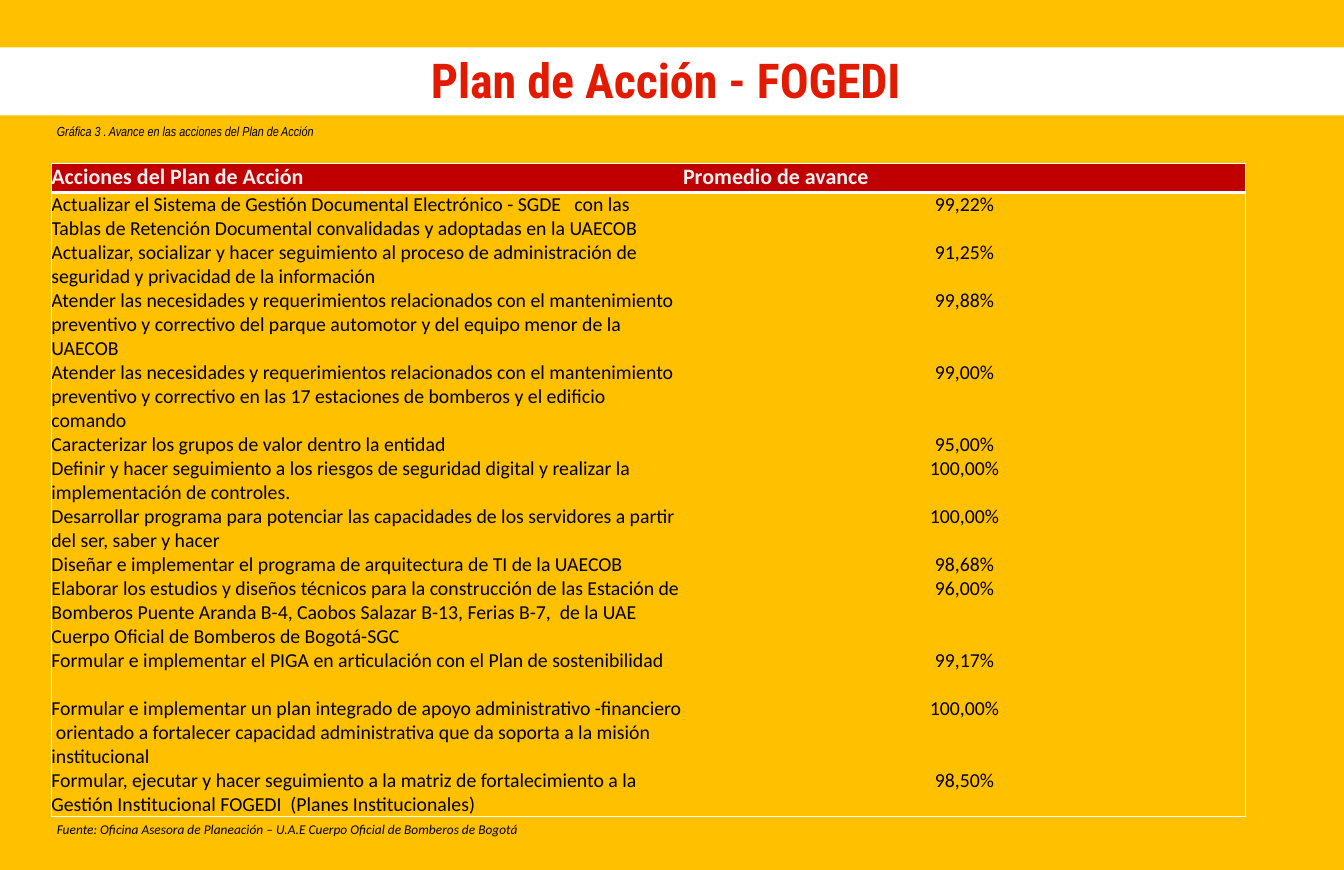
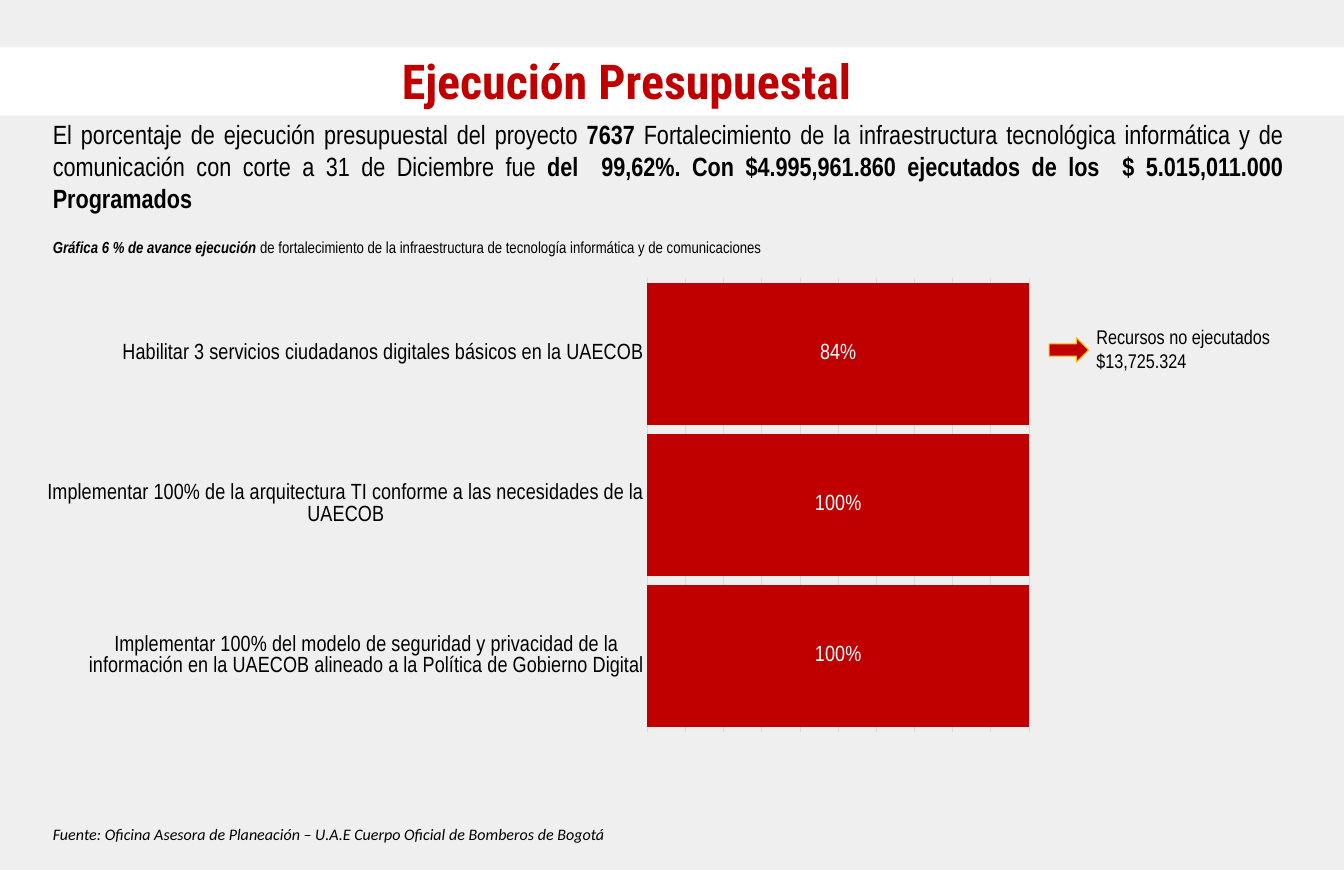
from dataclasses import dataclass

from lxml import etree
from pptx import Presentation
from pptx.chart.data import CategoryChartData
from pptx.dml.color import RGBColor
from pptx.enum.chart import XL_CHART_TYPE, XL_LABEL_POSITION, XL_TICK_MARK
from pptx.enum.shapes import MSO_SHAPE
from pptx.enum.text import MSO_ANCHOR, MSO_AUTO_SIZE, PP_ALIGN
from pptx.oxml.ns import qn
from pptx.util import Inches, Pt

LEFT, CENTER, JUSTIFY = PP_ALIGN.LEFT, PP_ALIGN.CENTER, PP_ALIGN.JUSTIFY
MIDDLE = MSO_ANCHOR.MIDDLE
NO_AUTOFIT = MSO_AUTO_SIZE.NONE
RECTANGLE, RIGHT_ARROW = MSO_SHAPE.RECTANGLE, MSO_SHAPE.RIGHT_ARROW
BAR_STACKED_100 = XL_CHART_TYPE.BAR_STACKED_100
LABEL_CENTER = XL_LABEL_POSITION.CENTER
NO_TICKS = XL_TICK_MARK.NONE

GRID_COLUMNS, GRID_ROWS = 17, 11
SLIDE_WIDTH, SLIDE_HEIGHT = Inches(17), Inches(11)
TITLE_ONLY_LAYOUT = 5


@dataclass(frozen=True)
class Theme:
    yellow: str = "FFC000"
    gray: str = "EFEFEF"
    white: str = "FFFFFF"
    black: str = "000000"
    red: str = "C00000"
    bright_red: str = "E21A00"
    rule: str = "D9D9D9"
    title_font: str = "Roboto Condensed"
    narrow_font: str = "Arial Narrow"
    body_font: str = "Calibri"
    title_size: float = 43.7
    lead_size: float = 24
    header_size: float = 20
    chart_size: float = 20
    body_size: float = 18
    caption_size: float = 14.6
    source_size: float = 12.2
    small_size: float = 12
    hairline: float = 0.75
    border: float = 1
    header_border: float = 3


THEME = Theme()


@dataclass(frozen=True)
class Box:
    column: float
    row: float
    columns: float
    rows: float

    def emu(self) -> tuple[int, int, int, int]:
        return across(self.column), down(self.row), across(self.columns), down(self.rows)


@dataclass(frozen=True)
class Style:
    size: float
    font: str = THEME.narrow_font
    color: str = THEME.black
    bold: bool = False
    italic: bool = False


@dataclass(frozen=True)
class Span:
    text: str
    style: Style


@dataclass(frozen=True)
class Action:
    name: str
    progress: str
    lines: int


@dataclass(frozen=True)
class Goal:
    name: str
    share: float


BAND = Box(0, 0.6, GRID_COLUMNS, 0.86)
SOURCE = "Fuente: Oficina Asesora de Planeación – U.A.E Cuerpo Oficial de Bomberos de Bogotá"
ACTIONS = [
    Action("Actualizar el Sistema de Gestión Documental Electrónico - SGDE   con las Tablas de Retención Documental convalidadas y adoptadas en la UAECOB", "99,22%", 2),
    Action("Actualizar, socializar y hacer seguimiento al proceso de administración de seguridad y privacidad de la información", "91,25%", 2),
    Action("Atender las necesidades y requerimientos relacionados con el mantenimiento preventivo y correctivo del parque automotor y del equipo menor de la UAECOB", "99,88%", 3),
    Action("Atender las necesidades y requerimientos relacionados con el mantenimiento preventivo y correctivo en las 17 estaciones de bomberos y el edificio comando", "99,00%", 3),
    Action("Caracterizar los grupos de valor dentro la entidad", "95,00%", 1),
    Action("Definir y hacer seguimiento a los riesgos de seguridad digital y realizar la implementación de controles.", "100,00%", 2),
    Action("Desarrollar programa para potenciar las capacidades de los servidores a partir del ser, saber y hacer", "100,00%", 2),
    Action("Diseñar e implementar el programa de arquitectura de TI de la UAECOB", "98,68%", 1),
    Action("Elaborar los estudios y diseños técnicos para la construcción de las Estación de Bomberos Puente Aranda B-4, Caobos Salazar B-13, Ferias B-7,  de la UAE Cuerpo Oficial de Bomberos de Bogotá-SGC", "96,00%", 3),
    Action("Formular e implementar el PIGA en articulación con el Plan de sostenibilidad", "99,17%", 2),
    Action("Formular e implementar un plan integrado de apoyo administrativo -financiero  orientado a fortalecer capacidad administrativa que da soporta a la misión institucional", "100,00%", 3),
    Action("Formular, ejecutar y hacer seguimiento a la matriz de fortalecimiento a la Gestión Institucional FOGEDI  (Planes Institucionales)", "98,50%", 2),
]
GOALS = [
    Goal("Implementar 100% del modelo de seguridad y privacidad de la información en la UAECOB alineado a la Política de Gobierno Digital", 1),
    Goal("Implementar 100% de la arquitectura TI conforme a las necesidades de la UAECOB", 1),
    Goal("Habilitar 3 servicios ciudadanos digitales básicos en la UAECOB", 0.84),
]


def across(columns: float) -> int:
    return round(SLIDE_WIDTH * columns / GRID_COLUMNS)


def down(rows: float) -> int:
    return round(SLIDE_HEIGHT * rows / GRID_ROWS)


def rgb(color: str) -> RGBColor:
    return RGBColor.from_string(color)


def paint(fill, color: str) -> None:
    fill.solid()
    fill.fore_color.rgb = rgb(color)


def format_font(font, style: Style) -> None:
    font.name = style.font
    font.size = Pt(style.size)
    font.bold = style.bold
    font.italic = style.italic
    font.color.rgb = rgb(style.color)


def write(frame, spans: list[Span], alignment=LEFT) -> None:
    paragraph = frame.paragraphs[0]
    paragraph.alignment = alignment
    for span in spans:
        run = paragraph.add_run()
        run.text = span.text
        format_font(run.font, span.style)


def add_text(slide, box: Box, spans: list[Span], alignment=LEFT) -> None:
    frame = slide.shapes.add_textbox(*box.emu()).text_frame
    frame.word_wrap = True
    write(frame, spans, alignment)


def add_preset(slide, preset, box: Box, color: str, outline: str | None = None) -> None:
    shape = slide.shapes.add_shape(preset, *box.emu())
    shape.shadow.inherit = False
    paint(shape.fill, color)
    if outline:
        shape.line.color.rgb = rgb(outline)
        shape.line.width = Pt(THEME.border)
    else:
        shape.line.fill.background()


def start_slide(presentation, background: str, title: str, color: str, box: Box, right_inset: float):
    slide = presentation.slides.add_slide(presentation.slide_layouts[TITLE_ONLY_LAYOUT])
    paint(slide.background.fill, background)
    add_preset(slide, RECTANGLE, BAND, THEME.white)
    placeholder = slide.shapes.title
    slide.shapes._spTree.append(placeholder._element)
    placeholder.left, placeholder.top, placeholder.width, placeholder.height = box.emu()
    frame = placeholder.text_frame
    frame.auto_size = NO_AUTOFIT
    frame.word_wrap = True
    frame.vertical_anchor = MIDDLE
    frame.margin_left, frame.margin_right = across(0.12), across(right_inset)
    frame.margin_top = frame.margin_bottom = down(0.06)
    write(frame, [Span(title, Style(THEME.title_size, THEME.title_font, color, bold=True))], CENTER)
    return slide


def set_borders(cell, widths: dict[str, float]) -> None:
    properties = cell._tc.get_or_add_tcPr()
    for position, side in enumerate("LRTB"):
        line = etree.Element(qn(f"a:ln{side}"))
        if side in widths:
            line.set("w", str(Pt(widths[side])))
            solid = etree.SubElement(line, qn("a:solidFill"))
            etree.SubElement(solid, qn("a:srgbClr")).set("val", THEME.white)
        else:
            line.set("w", "0")
            etree.SubElement(line, qn("a:noFill"))
        properties.insert(position, line)


def add_actions_table(slide, box: Box, column_widths: list[float], header_height: float) -> None:
    header = Action("Acciones del Plan de Acción", "Promedio de avance", 1)
    records = [header, *ACTIONS]
    table = slide.shapes.add_table(len(records), len(column_widths), *box.emu()).table
    table.horz_banding = False
    for column, width in zip(table.columns, column_widths):
        column.width = across(width)
    line_height = (box.rows - header_height) / sum(action.lines for action in ACTIONS)
    header_style = Style(THEME.header_size, THEME.body_font, THEME.gray, bold=True)
    body_style = Style(THEME.body_size, THEME.body_font)
    for row, record in enumerate(records):
        is_header = row == 0
        table.rows[row].height = down(header_height if is_header else record.lines * line_height)
        for column, text in enumerate((record.name, record.progress)):
            cell = table.cell(row, column)
            cell.margin_left = cell.margin_right = cell.margin_top = cell.margin_bottom = 0
            paint(cell.fill, THEME.red if is_header else THEME.yellow)
            borders = {"LR"[column]: THEME.border}
            if is_header:
                borders |= {"T": THEME.border, "B": THEME.header_border}
            elif row == 1:
                borders["T"] = THEME.header_border
            elif row == len(records) - 1:
                borders["B"] = THEME.border
            set_borders(cell, borders)
            centered = column == 1 and not is_header
            style = header_style if is_header else body_style
            write(cell.text_frame, [Span(text, style)], CENTER if centered else LEFT)


def place_plot(chart, shares: dict[str, float]) -> None:
    plot_area = chart.element.find(".//" + qn("c:plotArea"))
    for layout in plot_area.findall(qn("c:layout")):
        plot_area.remove(layout)
    layout = etree.Element(qn("c:layout"))
    manual = etree.SubElement(layout, qn("c:manualLayout"))
    settings = {"layoutTarget": "inner", "xMode": "edge", "yMode": "edge", **shares}
    for name, value in settings.items():
        etree.SubElement(manual, qn(f"c:{name}")).set("val", str(value))
    plot_area.insert(0, layout)


def add_goals_chart(slide, box: Box) -> None:
    data = CategoryChartData(number_format="0%")
    data.categories = [goal.name for goal in GOALS]
    data.add_series("Series 1", [goal.share for goal in GOALS])
    chart = slide.shapes.add_chart(BAR_STACKED_100, *box.emu(), data).chart
    chart.has_title = False
    chart.has_legend = False
    text_style = Style(THEME.chart_size)
    format_font(chart.font, text_style)
    place_plot(chart, {"x": 0.6, "y": 0.02, "w": 0.38, "h": 0.96})

    category_axis = chart.category_axis
    category_axis.major_tick_mark = category_axis.minor_tick_mark = NO_TICKS
    format_font(category_axis.tick_labels.font, text_style)
    value_axis = chart.value_axis
    value_axis.minimum_scale, value_axis.maximum_scale, value_axis.major_unit = 0, 1, 0.1
    value_axis.has_major_gridlines = True
    value_axis.visible = False
    value_axis.tick_labels.number_format = "0%"
    value_axis.tick_labels.number_format_is_linked = False
    for line in (category_axis.format.line, value_axis.major_gridlines.format.line):
        line.color.rgb = rgb(THEME.rule)
        line.width = Pt(THEME.hairline)

    plot = chart.plots[0]
    plot.gap_width, plot.overlap = 6, 100
    plot.vary_by_categories = False
    paint(plot.series[0].format.fill, THEME.red)
    plot.has_data_labels = True
    labels = plot.data_labels
    labels.show_value = True
    labels.number_format = "0%"
    labels.number_format_is_linked = False
    labels.position = LABEL_CENTER
    format_font(labels.font, Style(THEME.chart_size, color=THEME.white))


def build_action_plan(presentation) -> None:
    slide = start_slide(presentation, THEME.yellow, "Plan de Acción - FOGEDI", THEME.bright_red,
                        Box(1.59, 0.57, 13.81, 0.86), 0.27)
    add_text(slide, Box(0.62, 1.51, 4.67, 0.3),
             [Span("Gráfica 3 . Avance en las acciones del Plan de Acción", Style(THEME.small_size, italic=True))])
    add_text(slide, Box(0.62, 10.33, 8.37, 0.31),
             [Span(SOURCE, Style(THEME.source_size, THEME.body_font, italic=True))])
    add_actions_table(slide, Box(0.65, 2.07, 15.11, 8.26), [7.99, 7.12], 0.36)


def build_budget(presentation) -> None:
    slide = start_slide(presentation, THEME.gray, "Ejecución Presupuestal", THEME.red,
                        Box(1.66, 0.59, 13.81, 0.86), 1.4)
    lead, strong = Style(THEME.lead_size), Style(THEME.lead_size, bold=True)
    add_text(slide, Box(0.57, 1.45, 15.76, 1.31), [
        Span("El porcentaje de ejecución presupuestal del proyecto ", lead),
        Span("7637", strong),
        Span(" Fortalecimiento de la infraestructura tecnológica informática y de comunicación con corte a 31 de Diciembre fue ", lead),
        Span("del  99,62%. Con $4.995,961.860 ejecutados de los  $ 5.015,011.000 Programados", strong),
    ], JUSTIFY)
    add_text(slide, Box(0.57, 2.95, 9.27, 0.35), [
        Span("Gráfica 6 % de avance ejecución", Style(THEME.caption_size, bold=True, italic=True)),
        Span(" de fortalecimiento de la infraestructura de tecnología informática y de comunicaciones", Style(THEME.caption_size)),
    ])
    add_goals_chart(slide, Box(0.57, 3.4, 12.7, 5.97))
    add_preset(slide, RIGHT_ARROW, Box(13.27, 4.27, 0.5, 0.31), THEME.red, THEME.yellow)
    add_text(slide, Box(13.77, 4.06, 3.06, 0.71),
             [Span("Recursos no ejecutados $13,725.324", Style(THEME.body_size))])
    add_text(slide, Box(0.57, 10.37, 9.44, 0.35),
             [Span(SOURCE, Style(THEME.caption_size, THEME.body_font, italic=True))])


def main() -> None:
    presentation = Presentation()
    presentation.slide_width, presentation.slide_height = SLIDE_WIDTH, SLIDE_HEIGHT
    build_action_plan(presentation)
    build_budget(presentation)
    presentation.save("out.pptx")


if __name__ == "__main__":
    main()
